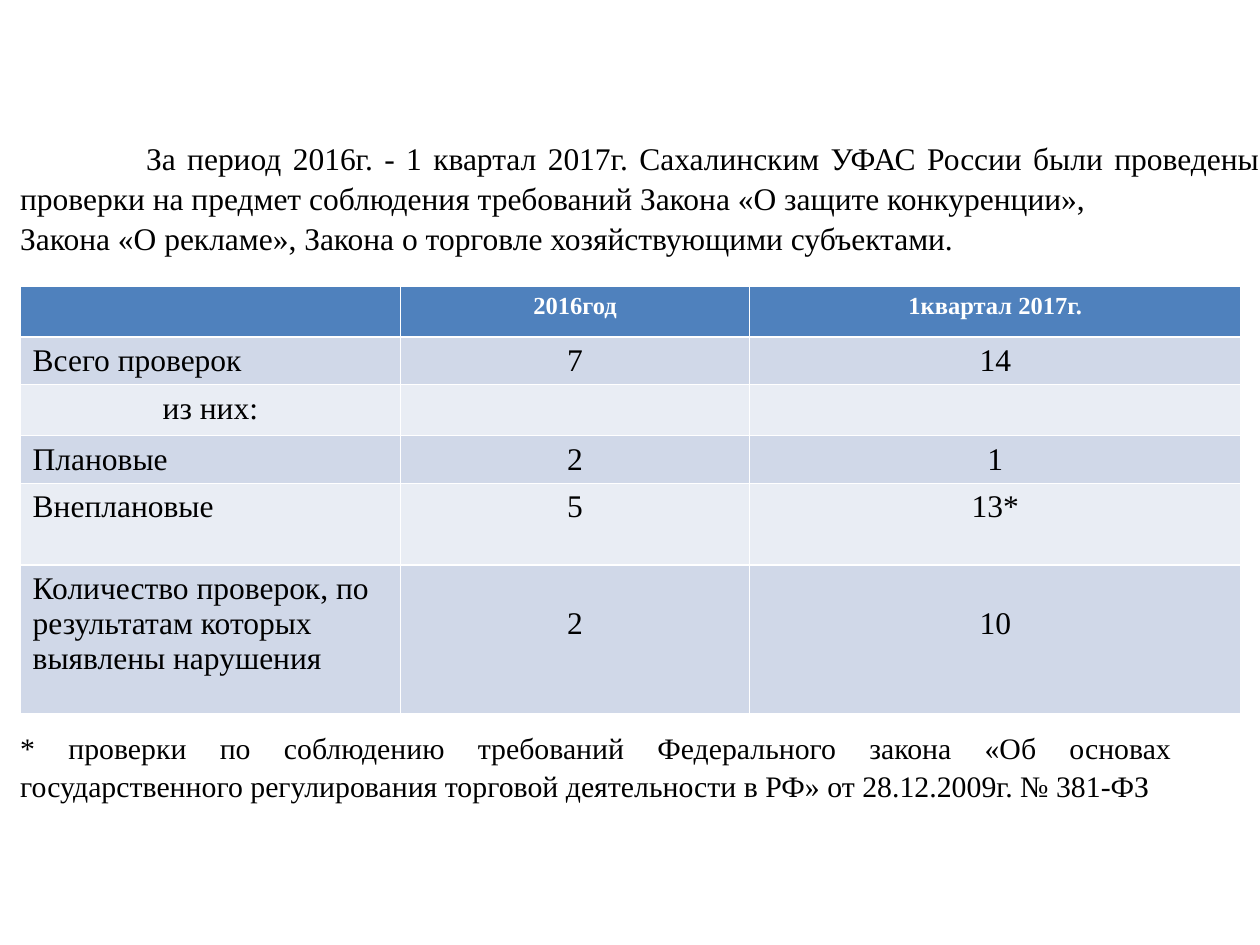
from dataclasses import dataclass

from pptx import Presentation
from pptx.dml.color import RGBColor
from pptx.enum.text import MSO_ANCHOR, MSO_AUTO_SIZE, PP_ALIGN
from pptx.util import Inches, Pt

LEFT, MID, JUST = PP_ALIGN.LEFT, PP_ALIGN.CENTER, PP_ALIGN.JUSTIFY
TOP = MSO_ANCHOR.TOP
FIXED = MSO_AUTO_SIZE.NONE
UNIT = Inches(0.1)
EDGE = 1.6


@dataclass(frozen=True)
class Theme:
    """Hold the colours, font and type sizes."""
    font: str = "Times New Roman"
    ink: str = "000000"
    pale: str = "FFFFFF"
    head: str = "4F81BD"
    bands: tuple = ("D0D8E8", "E9EDF4")
    body: int = 18
    note: int = 17
    label: int = 14


THEME = Theme()
INTRO = (
    "За период 2016г. - 1 квартал 2017г. Сахалинским УФАС России были "
    "проведены проверки на предмет соблюдения требований Закона «О защите "
    "конкуренции»,",
    "Закона «О рекламе», Закона о торговле хозяйствующими субъектами.",
)
NOTE = (
    "* проверки по соблюдению требований Федерального закона «Об основах "
    "государственного регулирования торговой деятельности в РФ» "
    "от 28.12.2009г. № 381-ФЗ"
)
ROWS = (
    ("", "2016год", "1квартал 2017г."),
    ("Всего проверок", "7", "14"),
    ("из них:", "", ""),
    ("Плановые", "2", "1"),
    ("Внеплановые", "5", "13*"),
    ("Количество проверок, по результатам которых выявлены нарушения", "2", "10"),
)
WIDTHS = (30.2, 27.7, 39)
HEIGHTS = (3.7, 3.7, 3.7, 3.7, 6.5, 11.8)


def span(count):
    """Turn grid units into a length."""
    return int(count * UNIT)


def write(para, text, size=THEME.body, color=THEME.ink, bold=False,
          align=LEFT, lead=1.0, indent=0):
    """Fill one paragraph with formatted text."""
    para.alignment = align
    para.line_spacing = lead
    para.space_before = Pt(0)
    if indent:
        para._p.get_or_add_pPr().set("indent", str(span(indent)))
    if text:
        run = para.add_run()
        run.text = text
        font = run.font
        font.name, font.size, font.bold = THEME.font, Pt(size), bold
        font.color.rgb = RGBColor.from_string(color)


def place(holder, left, top, width, height, inset=0):
    """Move a placeholder onto the grid and return its text frame."""
    holder.left, holder.top = span(left), span(top)
    holder.width, holder.height = span(width), span(height)
    frame = holder.text_frame
    frame.word_wrap, frame.auto_size = True, FIXED
    frame.vertical_anchor = TOP
    frame.margin_left = frame.margin_right = frame.margin_bottom = 0
    frame.margin_top = span(inset)
    return frame


def add_grid(slide, left, top):
    """Add the table of checks with banded rows."""
    table = slide.shapes.add_table(
        len(ROWS), len(WIDTHS), span(left), span(top),
        span(sum(WIDTHS)), span(sum(HEIGHTS))).table
    for col, width in zip(table.columns, WIDTHS):
        col.width = span(width)
    last = len(ROWS) - 1
    for i, (row, height) in enumerate(zip(ROWS, HEIGHTS)):
        table.rows[i].height = span(height)
        for j, text in enumerate(row):
            cell = table.cell(i, j)
            shade = THEME.bands[(i - 1) % 2] if i else THEME.head
            cell.fill.solid()
            cell.fill.fore_color.rgb = RGBColor.from_string(shade)
            if i == last and j:
                cell.margin_top = span(3.3)
            look = {"align": MID if j or i == 2 else LEFT}
            if not i:
                look.update(size=THEME.label, color=THEME.pale, bold=True)
            write(cell.text_frame.paragraphs[0], text, **look)


def main():
    """Build and save the slide."""
    deck = Presentation()
    deck.slide_width, deck.slide_height = span(100), span(75)
    slide = deck.slides.add_slide(deck.slide_layouts[0])
    title, intro = slide.placeholders
    frame = place(intro, EDGE, 9.4, 98.4, 14.8, inset=1.5)
    write(frame.paragraphs[0], INTRO[0], align=JUST, lead=1.05, indent=10)
    write(frame.add_paragraph(), INTRO[1], align=JUST, lead=1.05)
    add_grid(slide, EDGE, 22.7)
    frame = place(title, EDGE, 57.8, 91.4, 8.6)
    write(frame.paragraphs[0], NOTE, size=THEME.note, align=JUST, lead=1.05)
    deck.save("out.pptx")


if __name__ == "__main__":
    main()
